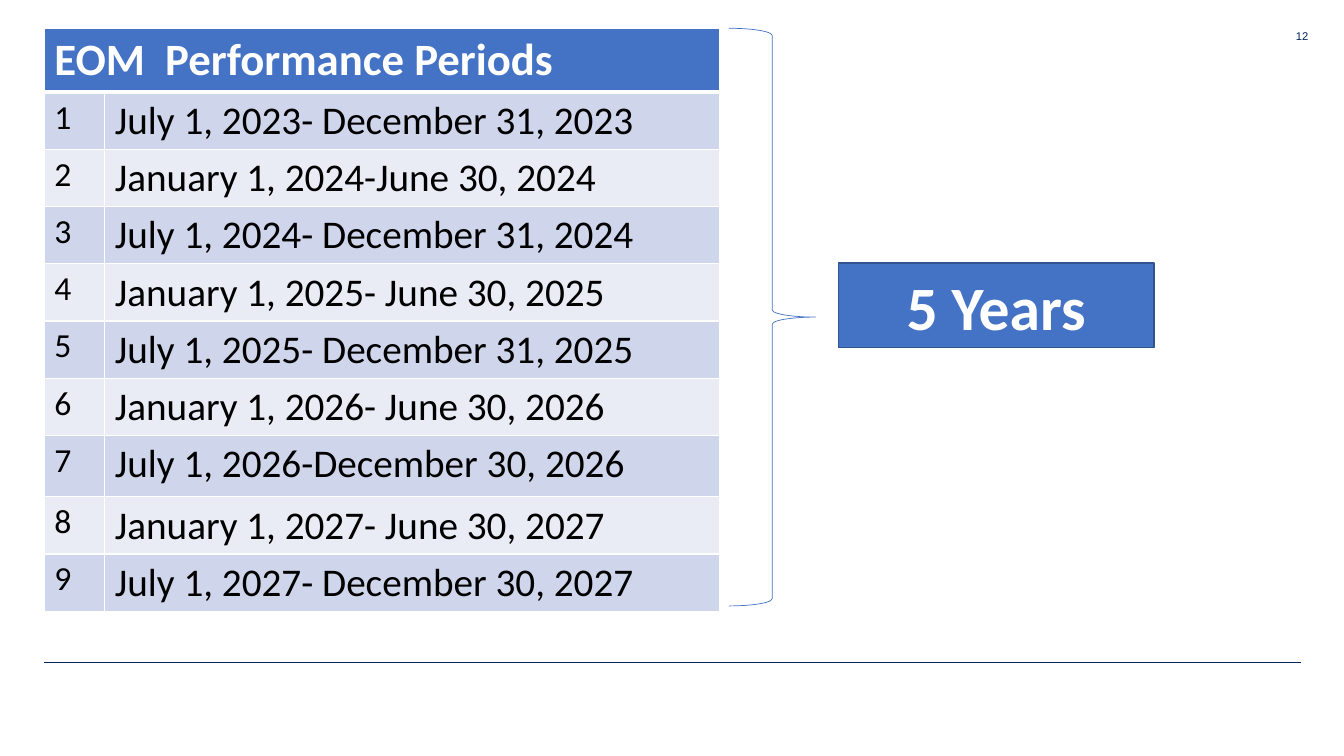
from lxml.etree import SubElement
from pptx import Presentation
from pptx.dml.color import RGBColor
from pptx.enum.shapes import MSO_CONNECTOR, MSO_SHAPE
from pptx.enum.text import MSO_ANCHOR, PP_ALIGN
from pptx.oxml.ns import qn
from pptx.util import Pt

HUES = {
    "navy": "002557", "blue": "4472C4", "edge": "325491", "white": "FFFFFF",
    "black": "000000", "odd": "CFD5EA", "even": "E9EBF5",
}
SPANS = [
    "July 1, 2023- December 31, 2023",
    "January 1, 2024-June 30, 2024",
    "July 1, 2024- December 31, 2024",
    "January 1, 2025- June 30, 2025",
    "July 1, 2025- December 31, 2025",
    "January 1, 2026- June 30, 2026",
    "July 1, 2026-December 30, 2026",
    "January 1, 2027- June 30, 2027",
    "July 1, 2027- December 30, 2027",
]


def hue(name):
    return RGBColor.from_string(HUES[name])


def write(frame, text, size, color="black", bold=False, font="Calibri", align=PP_ALIGN.LEFT):
    para = frame.paragraphs[0]
    para.alignment = align
    run = para.add_run()
    run.text = text
    run.font.size = Pt(size)
    run.font.name = font
    run.font.bold = bold
    run.font.color.rgb = hue(color)


def add_rule(slide, x, y, end):
    rule = slide.shapes.add_connector(MSO_CONNECTOR.STRAIGHT, Pt(x), Pt(y), Pt(end), Pt(y))
    rule.line.color.rgb = hue("navy")
    rule.line.width = Pt(0.25)
    SubElement(rule._element.spPr, qn("a:effectLst"))


def add_shape(slide, kind, box, line, width, fill=None):
    shape = slide.shapes.add_shape(kind, *map(Pt, box))
    shape.shadow.inherit = False
    if fill:
        shape.fill.solid()
        shape.fill.fore_color.rgb = hue(fill)
    else:
        shape.fill.background()
    shape.line.color.rgb = hue(line)
    shape.line.width = Pt(width)
    return shape


def add_page(slide, text, box):
    page = slide.shapes.add_textbox(*map(Pt, box))
    page.text_frame.word_wrap = True
    write(page.text_frame, text, 8, "navy", font="Arial", align=PP_ALIGN.RIGHT)


def style_cell(cell, fill, top=1, base=1):
    props = cell._tc.get_or_add_tcPr()
    for side, width in zip("LRTB", (1, 1, top, base)):
        edge = SubElement(props, qn(f"a:ln{side}"), w=str(Pt(width)))
        paint = SubElement(edge, qn("a:solidFill"))
        SubElement(paint, qn("a:srgbClr"), val=HUES["white"])
    cell.fill.solid()
    cell.fill.fore_color.rgb = hue(fill)


def add_periods(slide, x, y):
    count = len(SPANS) + 1
    table = slide.shapes.add_table(count, 2, Pt(x), Pt(y), Pt(482.4), Pt(416)).table
    table.first_row = table.horz_banding = False
    for col, width in zip(table.columns, (43.2, 439.2)):
        col.width = Pt(width)
    for row in table.rows:
        row.height = Pt(38.9)
    table.rows[7].height = Pt(43.9)

    head = table.cell(0, 0)
    head.merge(table.cell(0, 1))
    for cell in table.rows[0].cells:
        style_cell(cell, "blue", base=3)
    write(head.text_frame, "EOM  Performance Periods", 32, "white", bold=True)

    for num, span in enumerate(SPANS, 1):
        for col, (text, size) in enumerate(((str(num), 24), (span, 28))):
            cell = table.cell(num, col)
            style_cell(cell, "odd" if num % 2 else "even", top=3 if num == 1 else 1)
            write(cell.text_frame, text, size)


def main():
    """Build the slide of performance periods and save it."""
    deck = Presentation()
    deck.slide_width, deck.slide_height = Pt(960), Pt(540)
    slide = deck.slides.add_slide(deck.slide_layouts[6])
    add_rule(slide, 31.7, 473, 929.5)
    add_page(slide, "12", (879.8, 17.3, 61.9, 21.6))
    add_periods(slide, 31.7, 20.2)
    add_shape(slide, MSO_SHAPE.RIGHT_BRACE, (520.6, 20.2, 61.9, 412.6), "blue", 0.5)
    years = add_shape(slide, MSO_SHAPE.RECTANGLE, (599, 187.9, 225.4, 60.5), "edge", 1, "blue")
    years.text_frame.word_wrap = True
    years.text_frame.vertical_anchor = MSO_ANCHOR.MIDDLE
    write(years.text_frame, "5 Years", 44, "white", bold=True, align=PP_ALIGN.CENTER)
    deck.save("out.pptx")


if __name__ == "__main__":
    main()
